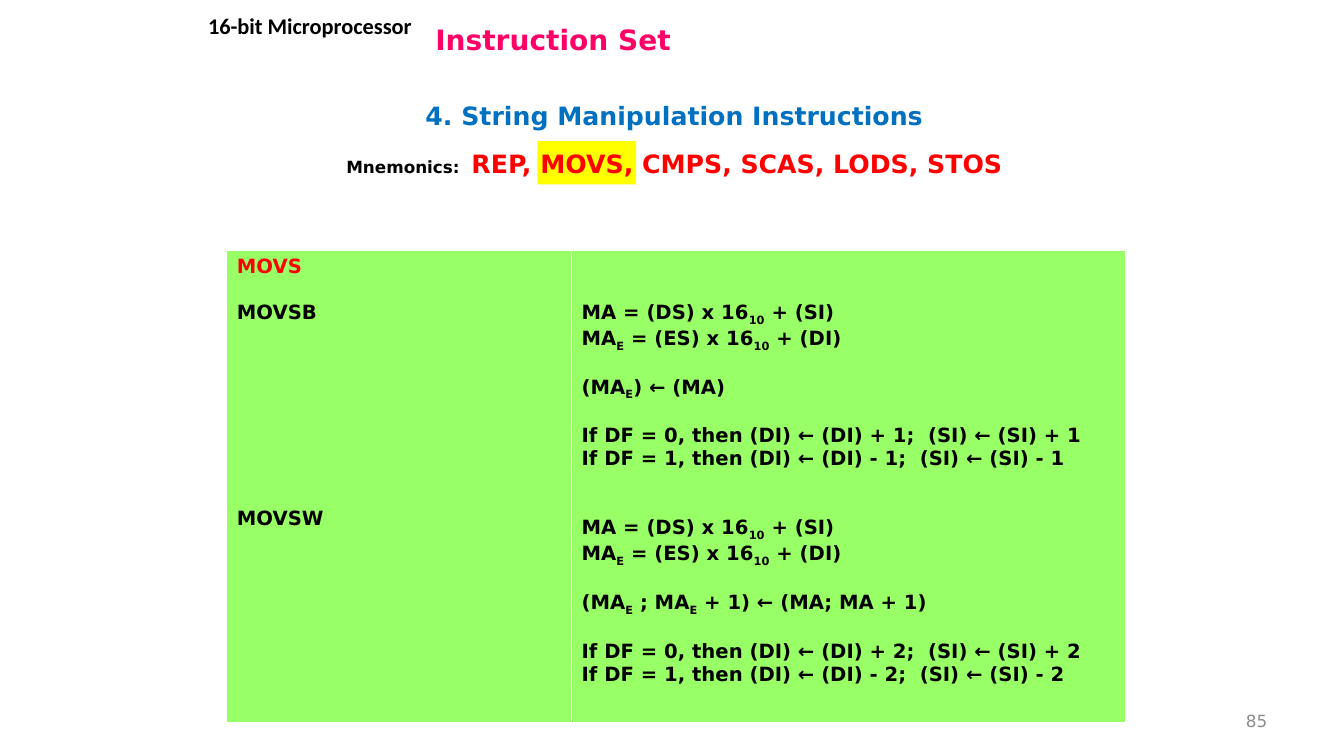
from dataclasses import dataclass

from lxml import etree
from pptx import Presentation
from pptx import util as u
from pptx.dml.color import RGBColor
from pptx.enum import shapes, text
from pptx.oxml import ns

WIDE, HIGH = u.Inches(13.33), u.Inches(7.5)
BLACK = RGBColor(0, 0, 0)
WHITE = RGBColor(0xFF, 0xFF, 0xFF)
RED = RGBColor(0xFF, 0, 0)
PINK = RGBColor(0xFF, 0, 0x66)
BLUE = RGBColor(0, 0x70, 0xC0)
GREY = RGBColor(0x8C, 0x8C, 0x8C)
GREEN = RGBColor(0x99, 0xFF, 0x66)
YELLOW = RGBColor(0xFF, 0xFF, 0)
SANS = "DejaVu Sans"
LINE = 16.4
LEFT, MID, RIGHT = text.PP_ALIGN.LEFT, text.PP_ALIGN.CENTER, text.PP_ALIGN.RIGHT
TOP, CORE = text.MSO_ANCHOR.TOP, text.MSO_ANCHOR.MIDDLE


@dataclass
class Span:
    words: str
    size: float
    tint: RGBColor
    bold: bool = True
    face: str = SANS


@dataclass
class Label:
    area: tuple[float, float, float, float]
    spans: list[Span]
    align: text.PP_ALIGN = MID
    anchor: text.MSO_ANCHOR = CORE


@dataclass
class Row:
    words: str
    gap: int = 0
    tint: RGBColor = BLACK


def across(share: float) -> int:
    return int(WIDE * share / 100)


def down(share: float) -> int:
    return int(HIGH * share / 100)


def place(area: tuple[float, float, float, float]) -> tuple[int, int, int, int]:
    x, y, w, h = area
    return across(x), down(y), across(w), down(h)


def add_span(para, span: Span):
    run = para.add_run()
    run.text = span.words
    style = {"size": u.Pt(span.size), "bold": span.bold, "name": span.face}
    for key, value in style.items():
        setattr(run.font, key, value)
    run.font.color.rgb = span.tint
    return run


def add_label(slide, label: Label) -> None:
    frame = slide.shapes.add_textbox(*place(label.area)).text_frame
    style = {"word_wrap": True, "vertical_anchor": label.anchor}
    for key, value in style.items():
        setattr(frame, key, value)
    para = frame.paragraphs[0]
    para.alignment = label.align
    for span in label.spans:
        add_span(para, span)


def add_mark(slide, area: tuple[float, float, float, float]) -> None:
    mark = slide.shapes.add_shape(shapes.MSO_SHAPE.RECTANGLE, *place(area))
    mark.shadow.inherit = False
    mark.fill.solid()
    mark.fill.fore_color.rgb = YELLOW
    mark.line.fill.background()


def add_edges(cell) -> None:
    props = cell._tc.get_or_add_tcPr()
    widths = {"lnL": 1, "lnR": 1, "lnT": 1, "lnB": 3}
    for spot, (tag, width) in enumerate(widths.items()):
        edge = etree.Element(ns.qn(f"a:{tag}"), w=str(u.Pt(width)))
        fill = etree.SubElement(edge, ns.qn("a:solidFill"))
        etree.SubElement(fill, ns.qn("a:srgbClr"), val=str(WHITE))
        props.insert(spot, edge)


def fill_cell(cell, rows: list[Row], lead: int) -> None:
    cell.fill.solid()
    cell.fill.fore_color.rgb = GREEN
    cell.margin_top = u.Inches(0.05) + u.Pt(lead * LINE)
    add_edges(cell)
    frame = cell.text_frame
    for spot, row in enumerate(rows):
        para = frame.add_paragraph() if spot else frame.paragraphs[0]
        if row.gap:
            para.space_before = u.Pt(row.gap * LINE)
        for turn, part in enumerate(row.words.split("_")):
            run = add_span(para, Span(part, 14, row.tint))
            if turn % 2:
                run.font._element.set("baseline", "-25000")


def steps(move: str, count: int, gap: int) -> list[Row]:
    return [
        Row("MA = (DS) x 16_10_ + (SI)", gap),
        Row("MA_E_ = (ES) x 16_10_ + (DI)"),
        Row(move, 1),
        Row(f"If DF = 0, then (DI) ← (DI) + {count};  (SI) ← (SI) + {count}", 1),
        Row(f"If DF = 1, then (DI) ← (DI) - {count};  (SI) ← (SI) - {count}"),
    ]


def add_grid(slide) -> None:
    area = place((16.88, 33.07, 66.9, 62.67))
    table = slide.shapes.add_table(1, 2, *area).table
    for column, share in zip(table.columns, (25.65, 41.25)):
        column.width = across(share)
    names = [Row("MOVS", tint=RED), Row("MOVSB", 1), Row("MOVSW", 8)]
    work = steps("(MA_E_) ← (MA)", 1, 0)
    work += steps("(MA_E_ ; MA_E_ + 1) ← (MA; MA + 1)", 2, 2)
    fill_cell(table.cell(0, 0), names, 0)
    fill_cell(table.cell(0, 1), work, 2)


LABELS = [
    Label((14.7, 12.4, 70.95, 5.73),
          [Span("4. String Manipulation Instructions", 18, BLUE)]),
    Label((31.65, 1.6, 65.85, 7.07), [Span("Instruction Set", 20, PINK)], LEFT),
    Label((71.7, 92.67, 23.33, 5.33), [Span("85", 12, GREY, False)], RIGHT),
    Label((13.05, 0.93, 20.03, 4.93),
          [Span("16-bit Microprocessor", 16, BLACK, face="Calibri")], anchor=TOP),
    Label((14.7, 18.93, 70.95, 5.33),
          [Span("Mnemonics:  ", 12, BLACK),
           Span("REP, MOVS, CMPS, SCAS, LODS, STOS", 18, RED)], anchor=TOP),
]


def main() -> None:
    deck = Presentation()
    deck.slide_width, deck.slide_height = WIDE, HIGH
    slide = deck.slides.add_slide(deck.slide_layouts[6])
    add_mark(slide, (39.98, 18.67, 7.35, 5.73))
    for label in LABELS:
        add_label(slide, label)
    add_grid(slide)
    deck.save("out.pptx")


if __name__ == "__main__":
    main()
